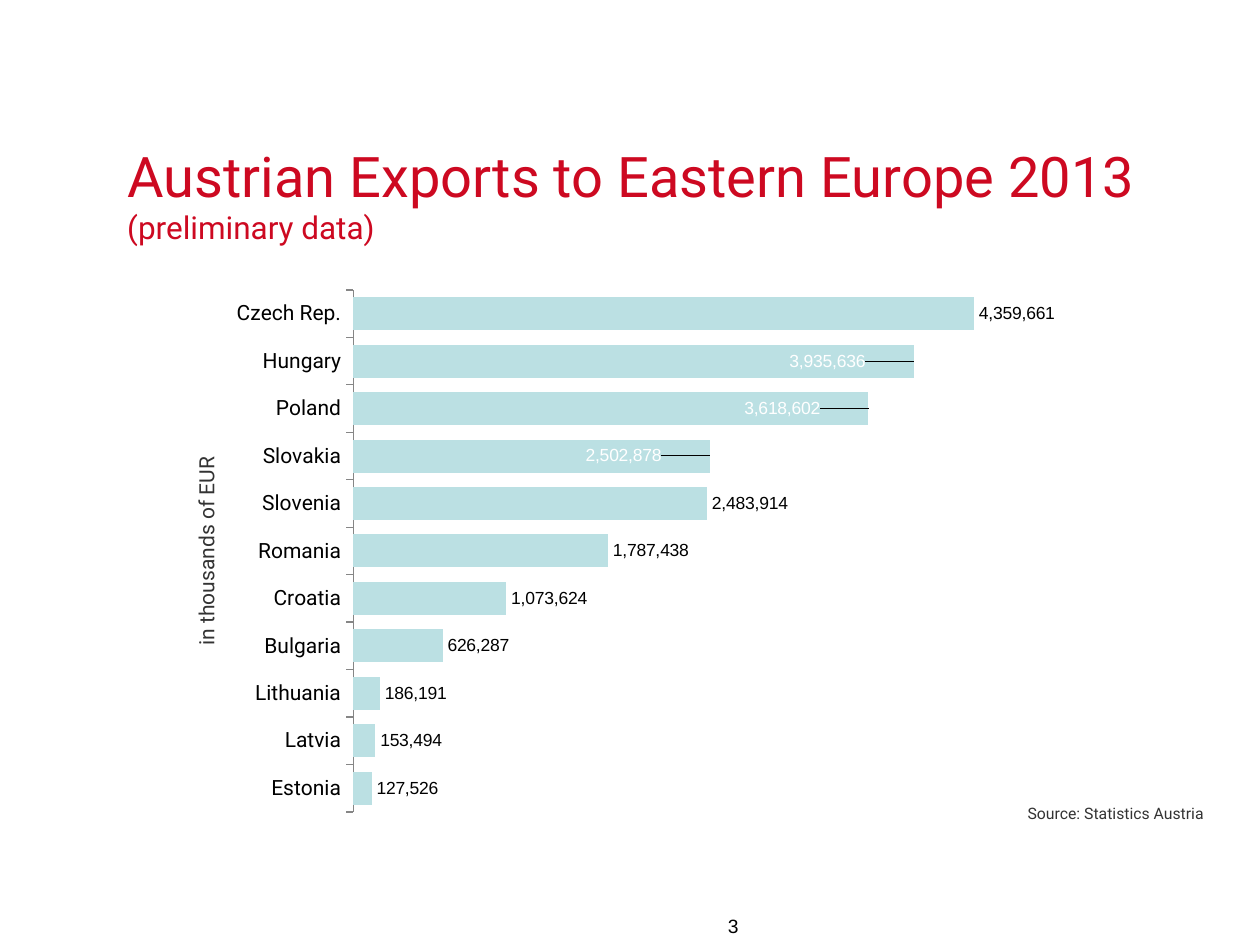
from lxml import etree
from pptx import Presentation
from pptx.chart.data import CategoryChartData
from pptx.dml.color import RGBColor
from pptx.enum import chart as ch, text
from pptx.oxml import parse_xml
from pptx.oxml.ns import nsdecls, qn
from pptx.util import Inches, Pt

RED = RGBColor(0xCD, 0x09, 0x21)
TEAL = RGBColor(0xBB, 0xE0, 0xE3)
GREY = RGBColor(0x33, 0x33, 0x33)
AXIS = RGBColor(0x86, 0x86, 0x86)
BLACK = RGBColor(0, 0, 0)
WHITE = RGBColor(0xFF, 0xFF, 0xFF)


def set_font(font, size, name, color):
    font.size, font.name = Pt(size), name
    font.color.rgb = color


def manual_layout(**values):
    layout = parse_xml(f"<c:layout {nsdecls('c')}><c:manualLayout/></c:layout>")
    for tag, value in values.items():
        etree.SubElement(layout[0], qn(f"c:{tag}")).set("val", str(value))
    return layout


prs = Presentation()
prs.slide_width, prs.slide_height = Inches(10), Inches(7.5)
s = prs.slides.add_slide(prs.slide_layouts[5])

# Title with a smaller second line
title = s.shapes.title
title.left, title.top = Inches(0.91), Inches(1.07)
title.width, title.height = Inches(8.74), Inches(1.17)
tf = title.text_frame
tf.text = "Austrian Exports to Eastern Europe 2013\v(preliminary data)"
tf.auto_size = text.MSO_AUTO_SIZE.NONE
tf.vertical_anchor = text.MSO_ANCHOR.TOP
p = tf.paragraphs[0]
p.alignment = text.PP_ALIGN.LEFT
for r, size in zip(p.runs, (32, 18)):
    set_font(r.font, size, "Roboto", RED)

# Bar chart of exports by country
exports = {
    "Estonia": 127526, "Latvia": 153494, "Lithuania": 186191,
    "Bulgaria": 626287, "Croatia": 1073624, "Romania": 1787438,
    "Slovenia": 2483914, "Slovakia": 2502878, "Poland": 3618602,
    "Hungary": 3935636, "Czech Rep.": 4359661,
}
data = CategoryChartData(number_format="#,##0")
data.categories = list(exports)
data.add_series("Series 1", list(exports.values()))
chart = s.shapes.add_chart(ch.XL_CHART_TYPE.BAR_CLUSTERED, Inches(1.76), Inches(2.19),
                           Inches(6.88), Inches(4.45), data).chart
chart.has_legend = chart.has_title = False
set_font(chart.font, 10, "Arial", BLACK)

plot_area = chart._chartSpace.chart.plotArea
for old in plot_area.findall(qn("c:layout")):
    plot_area.remove(old)
plot_area.insert(0, manual_layout(layoutTarget="inner", xMode="edge", yMode="edge",
                                  x=0.152, y=0.025, w=0.821, h=0.931))

# Axes
cat_axis, val_axis = chart.category_axis, chart.value_axis
cat_axis.major_tick_mark = ch.XL_TICK_MARK.OUTSIDE
cat_axis.format.line.color.rgb = AXIS
set_font(cat_axis.tick_labels.font, 12, "Roboto", BLACK)
val_axis.minimum_scale, val_axis.maximum_scale = 0, 5000000
val_axis.has_major_gridlines = False
val_axis.visible = False

# Bars and value labels
plot = chart.plots[0]
plot.gap_width = 44
plot.vary_by_categories = False
series = plot.series[0]
series.format.fill.solid()
series.format.fill.fore_color.rgb = TEAL
labels = series.data_labels
labels.show_value = True
labels.number_format, labels.number_format_is_linked = "#,##0", False
labels.position = ch.XL_LABEL_POSITION.OUTSIDE_END
set_font(labels.font, 10, "Arial", BLACK)

# White labels shifted inside their bars
shifts = {"Slovakia": -0.05, "Poland": -0.05, "Hungary": -0.05}
for country in shifts:
    label = series.points[list(exports).index(country)].data_label
    set_font(label.font, 10, "Arial", WHITE)
    label.position = ch.XL_LABEL_POSITION.INSIDE_END
for d_lbl, shift in zip(chart._chartSpace.xpath(".//c:dLbl"), shifts.values()):
    d_lbl.insert(1, manual_layout(x=shift, y=0))
    d_lbl.insert(2, parse_xml(
        f'<c:numFmt {nsdecls("c")} formatCode="#,##0" sourceLinked="0"/>'))

# Unit, source and page number
RIGHT, CENTER = text.PP_ALIGN.RIGHT, text.PP_ALIGN.CENTER
notes = [
    ("in thousands of EUR", 0.59, 4.1, 2.34, 0.55, 270, CENTER, 12, "Roboto", GREY),
    ("Source: Statistics Austria", 6.88, 6.33, 2.77, 0.31, 0, RIGHT, 9, "Roboto", GREY),
    ("3", 4.06, 7.21, 1.9, 0.29, 0, RIGHT, 11, "Arial", BLACK),
]
for words, x, y, w, h, angle, align, size, name, color in notes:
    sp = s.shapes.add_textbox(Inches(x), Inches(y), Inches(w), Inches(h))
    sp.rotation = angle
    tf = sp.text_frame
    tf.word_wrap = True
    tf.text = words
    p = tf.paragraphs[0]
    p.alignment = align
    set_font(p.runs[0].font, size, name, color)

prs.save("out.pptx")
